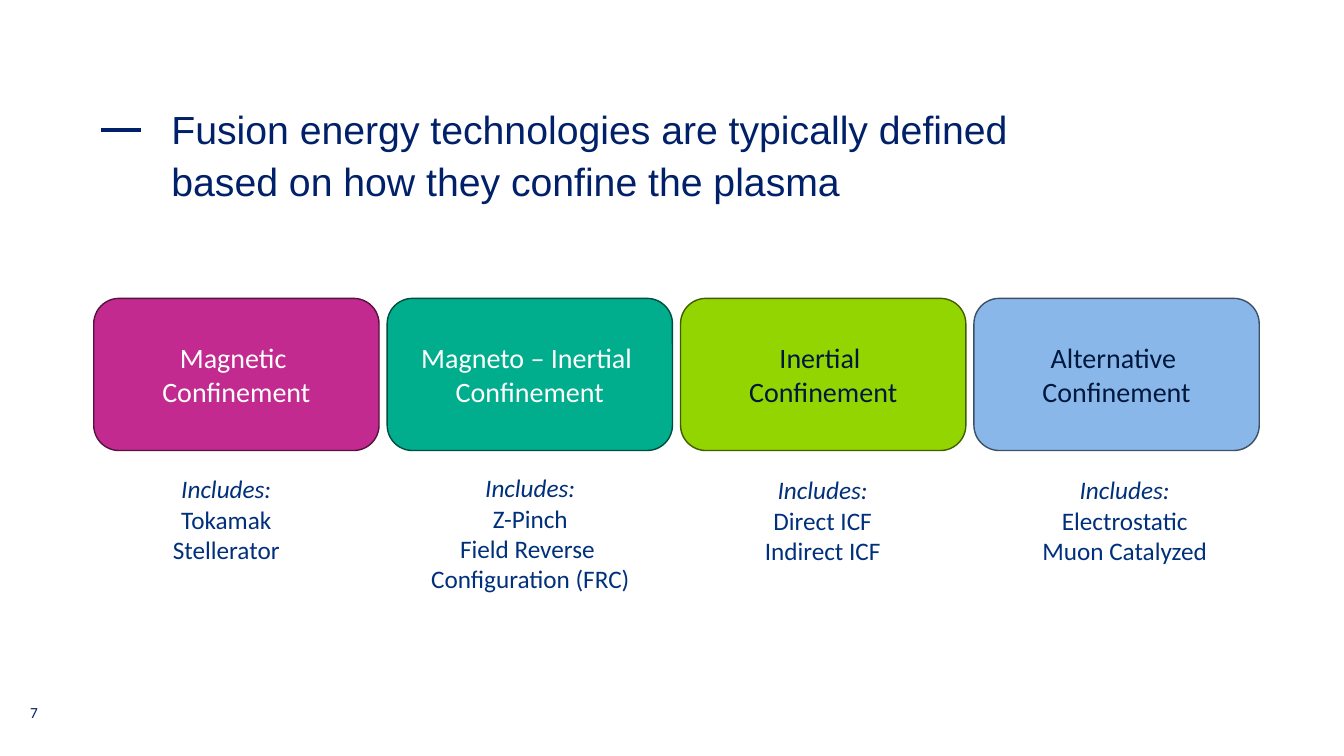
from dataclasses import dataclass

from lxml.etree import SubElement
from pptx import Presentation
from pptx.dml.color import RGBColor
from pptx.enum.shapes import MSO_CONNECTOR, MSO_SHAPE
from pptx.enum.text import MSO_ANCHOR, MSO_AUTO_SIZE, PP_ALIGN
from pptx.oxml.ns import qn
from pptx.util import Inches, Pt


@dataclass(frozen=True)
class Theme:
    heading_font: str = "Arial"
    body_font: str = "Calibri"
    navy: str = "002169"
    blue: str = "00307C"
    dark: str = "00183E"
    white: str = "FFFFFF"
    title_size: int = 28
    card_size: int = 20
    list_size: int = 18
    number_size: int = 11


class SlideBuilder:
    def __init__(self, slide, theme):
        self.s = slide
        self.theme = theme

    def style(self, p, size, color, font=None, align=PP_ALIGN.LEFT):
        p.alignment = align
        p.font.name = font or self.theme.body_font
        p.font.size = Pt(size)
        p.font.color.rgb = RGBColor.from_string(color)

    def title(self, text, left, top, width, height):
        sp = self.s.shapes.title
        sp.left, sp.top = Inches(left), Inches(top)
        sp.width, sp.height = Inches(width), Inches(height)
        tf = sp.text_frame
        tf.margin_left = tf.margin_right = tf.margin_top = tf.margin_bottom = 0
        tf.vertical_anchor = MSO_ANCHOR.TOP
        tf.auto_size = MSO_AUTO_SIZE.SHAPE_TO_FIT_TEXT
        p = tf.paragraphs[0]
        p.text = text
        p.line_spacing = 1.1
        self.style(p, self.theme.title_size, self.theme.navy, self.theme.heading_font)

    def rule(self, x1, x2, y):
        line = self.s.shapes.add_connector(
            MSO_CONNECTOR.STRAIGHT, Inches(x1), Inches(y), Inches(x2), Inches(y))
        line.line.color.rgb = RGBColor.from_string(self.theme.navy)
        line.line.width = Pt(2.5)
        SubElement(line._element.spPr, qn("a:effectLst"))

    def card(self, text, left, top, width, height, fill, border, color):
        sp = self.s.shapes.add_shape(
            MSO_SHAPE.ROUNDED_RECTANGLE,
            Inches(left), Inches(top), Inches(width), Inches(height))
        sp.shadow.inherit = False
        sp.fill.solid()
        sp.fill.fore_color.rgb = RGBColor.from_string(fill)
        sp.line.color.rgb = RGBColor.from_string(border)
        sp.line.width = Pt(1)
        tf = sp.text_frame
        tf.vertical_anchor = MSO_ANCHOR.MIDDLE
        p = tf.paragraphs[0]
        p.text = text
        self.style(p, self.theme.card_size, color, align=PP_ALIGN.CENTER)

    def includes(self, lines, left, top, width, height):
        sp = self.s.shapes.add_textbox(
            Inches(left), Inches(top), Inches(width), Inches(height))
        tf = sp.text_frame
        tf.word_wrap = False
        tf.auto_size = MSO_AUTO_SIZE.SHAPE_TO_FIT_TEXT
        p = tf.paragraphs[0]
        self.style(p, self.theme.list_size, self.theme.blue, align=PP_ALIGN.CENTER)
        r = p.add_run()
        r.text = "Includes:"
        r.font.italic = True
        for line in lines:
            p.add_line_break()
            p.add_run().text = line

    def page_number(self, text, left, top, width, height):
        sp = self.s.shapes.add_textbox(
            Inches(left), Inches(top), Inches(width), Inches(height))
        tf = sp.text_frame
        tf.word_wrap = True
        tf.margin_left = tf.margin_right = 0
        p = tf.paragraphs[0]
        p.text = text
        self.style(p, self.theme.number_size, self.theme.navy)


def main():
    prs = Presentation()
    prs.slide_width, prs.slide_height = Inches(13.33), Inches(7.5)
    theme = Theme()
    slide = SlideBuilder(prs.slides.add_slide(prs.slide_layouts[5]), theme)

    # Heading
    slide.rule(1, 1.4, 1.29)
    slide.title("Fusion energy technologies are typically defined \n"
                "based on how they confine the plasma", 1.7, 1, 11.08, 1)
    slide.page_number("7", 0.3, 6.93, 0.48, 0.4)

    # Confinement types: name, fill, border, text colour, examples, list box
    confinements = [
        ("Magnetic", "C22A90", "55123F", theme.white,
         ["Tokamak", "Stellerator"], (1.61, 4.65, 1.27, 1.01)),
        ("Magneto – Inertial", "00AE8D", "004C3E", theme.white,
         ["Z-Pinch", "Field Reverse ", "Configuration (FRC)"], (4.16, 4.64, 2.2, 1.31)),
        ("Inertial", "93D500", "405D00", theme.dark,
         ["Direct ICF", "Indirect ICF"], (7.48, 4.66, 1.36, 1.01)),
        ("Alternative", "8AB7E9", "3C5066", theme.dark,
         ["Electrostatic", "Muon Catalyzed"], (10.23, 4.66, 1.85, 1.01)),
    ]
    card_left, card_pitch = 0.93, 2.91
    for i, (name, fill, border, color, examples, box) in enumerate(confinements):
        slide.card(f"{name} \nConfinement", card_left + i * card_pitch, 2.96,
                   2.83, 1.51, fill, border, color)
        slide.includes(examples, *box)

    prs.save("out.pptx")


if __name__ == "__main__":
    main()
